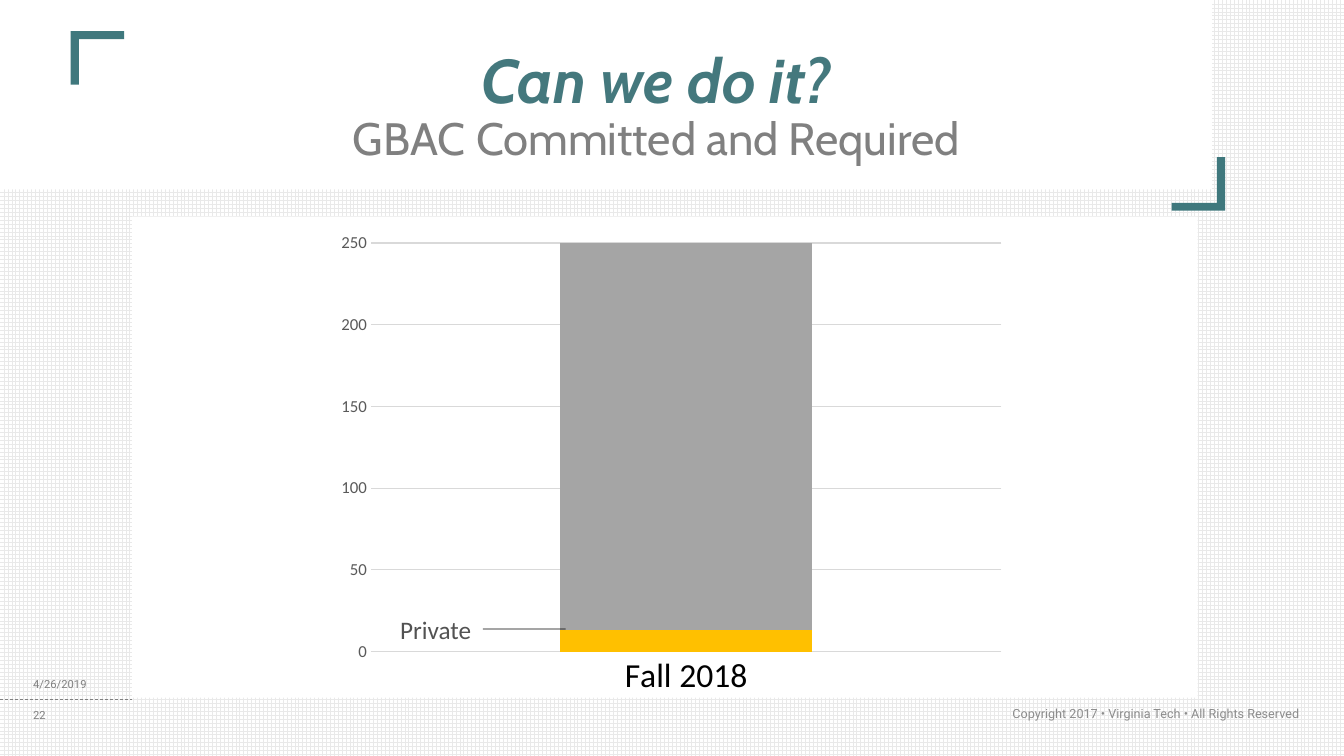
import pptx
import pptx.chart.data
import pptx.dml.color
import pptx.enum.chart
import pptx.enum.dml
import pptx.enum.shapes
import pptx.enum.text
import pptx.oxml
import pptx.oxml.ns
import pptx.util

COLORS = {
    "white": "FFFFFF", "grid": "E9E9E9", "bracket": "3F787D", "title": "44787D",
    "grey": "808080", "footer": "8C8C8C", "label": "525252", "black": "000000",
    "tick": "595959", "rule": "D9D9D9", "private": "FFC000", "remaining": "A5A5A5",
}
ALIGN = pptx.enum.text.PP_ALIGN


def color(name):
    return pptx.dml.color.RGBColor.from_string(COLORS[name])


class SlideBuilder:
    """Draws on one slide; every position and size is a percentage of the slide."""

    def __init__(self, presentation):
        self.width = presentation.slide_width
        self.height = presentation.slide_height
        self.slide = presentation.slides.add_slide(presentation.slide_layouts[6])
        self.shapes = self.slide.shapes

    def box(self, left, top, width, height):
        return (round(left * self.width / 100), round(top * self.height / 100),
                round(width * self.width / 100), round(height * self.height / 100))

    def background(self):
        fill = self.slide.background.fill
        fill.patterned()
        fill.pattern = pptx.enum.dml.MSO_PATTERN.LARGE_GRID
        fill.fore_color.rgb = color("grid")
        fill.back_color.rgb = color("white")

    def panel(self, area, fill="white"):
        shape = self.shapes.add_shape(pptx.enum.shapes.MSO_SHAPE.RECTANGLE, *self.box(*area))
        shape.shadow.inherit = False
        shape.fill.solid()
        shape.fill.fore_color.rgb = color(fill)
        shape.line.fill.background()
        return shape

    def bracket(self, left, top, rotation):
        """Add an L-shaped corner; the preset has no member in MSO_SHAPE."""
        shape = self.panel((left, top, 3.98, 7.07), "bracket")
        shape.rotation = rotation
        geometry = shape._element.spPr.find(pptx.oxml.ns.qn("a:prstGeom"))
        geometry.set("prst", "corner")
        for guides in list(geometry):
            geometry.remove(guides)
        geometry.append(pptx.oxml.parse_xml(
            f'<a:avLst {pptx.oxml.ns.nsdecls("a")}><a:gd name="adj1" fmla="val 15500"/>'
            '<a:gd name="adj2" fmla="val 14700"/></a:avLst>'))

    def line(self, start, end, line_color, dashed=False):
        connector = self.shapes.add_connector(
            pptx.enum.shapes.MSO_CONNECTOR.STRAIGHT, *self.box(*start, *end))
        connector.line.color.rgb = color(line_color)
        connector.line.width = pptx.util.Pt(0.5)
        if dashed:
            connector.line.dash_style = pptx.enum.dml.MSO_LINE.DASH
        properties = connector._element.spPr
        properties.append(pptx.oxml.parse_xml(
            f"<a:effectLst {pptx.oxml.ns.nsdecls('a')}/>"))
        return connector

    def font(self, font, name, size, font_color):
        font.name = name
        font.size = pptx.util.Pt(size)
        font.color.rgb = color(font_color)

    def text(self, area, text, name, size, text_color, align=ALIGN.LEFT, wrap=True):
        shape = self.shapes.add_textbox(*self.box(*area))
        frame = shape.text_frame
        frame.word_wrap = wrap
        frame.vertical_anchor = pptx.enum.text.MSO_ANCHOR.MIDDLE
        paragraph = frame.paragraphs[0]
        paragraph.text = text
        paragraph.alignment = align
        for run in paragraph.runs:
            self.font(run.font, name, size, text_color)
        return shape

    def title(self, area, heading, subheading):
        shape = self.text(area, f"{heading}\v{subheading}", "Cabin", 44.1, "title", ALIGN.CENTER)
        frame = shape.text_frame
        frame.margin_left = pptx.util.Inches(1.3)
        frame.margin_top = frame.margin_right = frame.margin_bottom = pptx.util.Inches(0.3)
        paragraph = frame.paragraphs[0]
        paragraph.line_spacing = 0.9
        heading_run, subheading_run = paragraph.runs
        heading_run.font.bold = heading_run.font.italic = True
        self.font(subheading_run.font, "Cabin", 32.4, "grey")

    def stacked_chart(self, area, category, series):
        """Add a stacked column; series lists (name, value, colour)."""
        data = pptx.chart.data.CategoryChartData()
        data.categories = [category]
        for name, value, _ in series:
            data.add_series(name, [value])
        chart = self.shapes.add_chart(
            pptx.enum.chart.XL_CHART_TYPE.COLUMN_STACKED, *self.box(*area), data).chart
        chart.has_legend = chart.has_title = False
        self.font(chart.font, "Calibri", 10, "black")
        plot = chart.plots[0]
        plot.gap_width, plot.overlap = 150, 100
        plot.vary_by_categories = False
        for bar, (_, _, fill) in zip(plot.series, series):
            bar.format.fill.solid()
            bar.format.fill.fore_color.rgb = color(fill)

        values, categories = chart.value_axis, chart.category_axis
        values.minimum_scale, values.maximum_scale, values.major_unit = 0, 250, 50
        values.format.line.fill.background()
        values.has_major_gridlines = True
        for line in (values.major_gridlines.format.line, categories.format.line):
            line.color.rgb = color("rule")
            line.width = pptx.util.Pt(0.75)
        for axis, size, name in ((values, 12, "tick"), (categories, 24, "black")):
            axis.major_tick_mark = pptx.enum.chart.XL_TICK_MARK.NONE
            self.font(axis.tick_labels.font, "Calibri", size, name)
        self.fix_plot_area(chart, x=0.06, y=0.04, w=0.92, h=0.85)

    def fix_plot_area(self, chart, **shares):
        """Place the inner plot area by shares of the chart's size."""
        sizes = "".join(f'<c:{key} val="{share}"/>' for key, share in shares.items())
        layout = pptx.oxml.parse_xml(
            f'<c:layout {pptx.oxml.ns.nsdecls("c")}><c:manualLayout>'
            '<c:layoutTarget val="inner"/><c:xMode val="edge"/><c:yMode val="edge"/>'
            f'{sizes}</c:manualLayout></c:layout>')
        plot_area = chart._chartSpace.chart.plotArea
        for old_layout in plot_area.findall(pptx.oxml.ns.qn("c:layout")):
            plot_area.remove(old_layout)
        plot_area.insert(0, layout)


def main():
    presentation = pptx.Presentation()
    presentation.slide_width = pptx.util.Inches(13.33)
    presentation.slide_height = pptx.util.Inches(7.5)
    builder = SlideBuilder(presentation)

    builder.background()
    builder.panel((9.83, 28.67, 79.29, 63.6))
    builder.panel((0, 0, 90.17, 25.07))
    builder.bracket(87.17, 20.8, 270)
    builder.line((0, 92.53), (9.83, 92.53), "grey", dashed=True)
    builder.bracket(5.25, 4.13, 90)
    builder.title((0, 3.73, 90.17, 21.07), "Can we do it?", "GBAC Committed and Required")

    builder.text((64.37, 92.4, 33.01, 3.87), "Copyright 2017 • Virginia Tech • All Rights Reserved",
                 "Roboto", 9, "footer", ALIGN.RIGHT)
    for row, text in enumerate(("4/26/2019", "22")):
        builder.text((1.73, 87.87 + 4 * row, 8.18, 5.33), text, "Roboto", 8, "grey")

    builder.stacked_chart((24.53, 29.6, 51.01, 63.6), "Fall 2018",
                          [("Series 1", 13, "private"), ("Series 2", 237, "remaining")])
    label = builder.text((29.03, 80.53, 6.9, 5.33), "Private", "Calibri", 18, "label", wrap=False)
    label.text_frame.auto_size = pptx.enum.text.MSO_AUTO_SIZE.SHAPE_TO_FIT_TEXT
    leader = builder.line((35.93, 83.2), (42.09, 83.2), "black")
    leader.begin_connect(label, 3)

    presentation.save("out.pptx")


if __name__ == "__main__":
    main()
